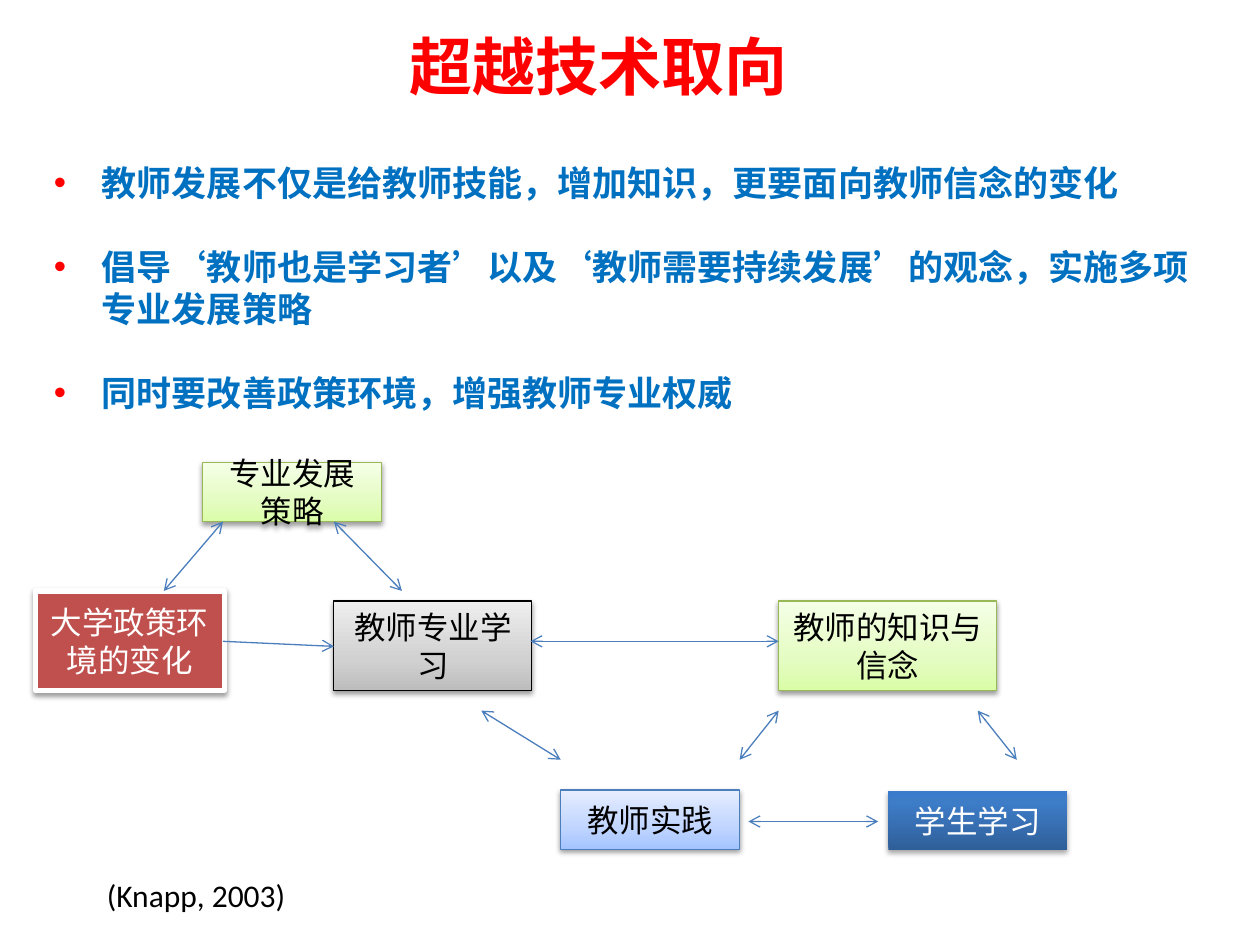
from dataclasses import dataclass

import lxml.etree
import pptx
import pptx.dml.color
import pptx.enum.shapes
import pptx.enum.text
import pptx.oxml.ns
import pptx.util

Inches = pptx.util.Inches
Pt = pptx.util.Pt
qn = pptx.oxml.ns.qn


@dataclass(frozen=True)
class Theme:
    title_font: str = "Lato"
    body_font: str = "Calibri"
    title_size: int = 36
    bullet_size: int = 20
    label_size: int = 18
    red: str = "FF0000"
    blue: str = "0070C0"
    black: str = "000000"
    white: str = "FFFFFF"
    arrow: str = "4B7EBC"


@dataclass(frozen=True)
class NodeStyle:
    """Gradient stops are (percent, colour) pairs, running from bottom to top."""
    stops: tuple
    line: str = None
    text: str = Theme.black
    line_width: float = 0.75
    shadow_alpha: int = 38
    shadow_distance: float = 1.6


THEME = Theme()
GREEN = NodeStyle(((0, "DAFDA7"), (35, "E4FCC2"), (100, "F5FFE7")), "98B955")
GREY = NodeStyle(((0, "BDBDBD"), (35, "D1D1D1"), (100, "EEEEEE")), THEME.black)
PALE_BLUE = NodeStyle(((0, "A4C4FF"), (35, "BFD4FF"), (100, "E6EEFF")), THEME.arrow)
DEEP_BLUE = NodeStyle(((0, "2F5F99"), (80, "3D7CC7"), (100, "3A7CCB")), None,
                      THEME.white, shadow_alpha=35, shadow_distance=1.8)
RED = NodeStyle(((0, "C0504D"),), THEME.white, THEME.white, 3)

TITLE = "超越技术取向"
BULLETS = [
    "教师发展不仅是给教师技能，增加知识，更要面向教师信念的变化",
    "倡导‘教师也是学习者’以及‘教师需要持续发展’的观念，实施多项专业发展策略",
    "同时要改善政策环境，增强教师专业权威",
]
# Positions are in inches from the corner of the diagram.
NODES = [
    ("专业发展策略", (1.33, 0, 1.42, 0.47), GREEN),
    ("大学政策环境的变化", (0, 1.02, 1.5, 0.79), RED),
    ("教师专业学习", (2.37, 1.1, 1.57, 0.71), GREY),
    ("教师实践", (4.17, 2.6, 1.42, 0.47), PALE_BLUE),
    ("教师的知识与信念", (5.9, 1.1, 1.73, 0.71), GREEN),
    ("学生学习", (6.77, 2.61, 1.42, 0.47), DEEP_BLUE),
]
TWO_WAY_ARROWS = [
    (1.49, 0.47, 1.02, 1.02),
    (2.37, 0.47, 2.91, 1.02),
    (3.93, 1.42, 5.9, 1.42),
    (3.54, 1.97, 4.17, 2.36),
    (5.9, 1.97, 5.59, 2.36),
    (7.48, 1.97, 7.79, 2.36),
    (5.66, 2.85, 6.69, 2.85),
]
ONE_WAY_ARROWS = [(1.49, 1.42, 2.37, 1.46)]


def rgb(colour):
    return pptx.dml.color.RGBColor.from_string(colour)


def add_element(parent, tag, **attributes):
    element = lxml.etree.SubElement(parent, qn(tag))
    for name, value in attributes.items():
        element.set(name, str(value))
    return element


def format_text(frame, font, size, colour, bold=False):
    for para in frame.paragraphs:
        for span in para.runs:
            span.font.name = font
            span.font.size = Pt(size)
            span.font.bold = bold
            span.font.color.rgb = rgb(colour)


def add_title(page, box):
    title = page.shapes.title
    title.left, title.top, title.width, title.height = map(Inches, box)
    frame = title.text_frame
    frame.text = TITLE
    frame.vertical_anchor = pptx.enum.text.MSO_ANCHOR.MIDDLE
    frame.paragraphs[0].alignment = pptx.enum.text.PP_ALIGN.CENTER
    format_text(frame, THEME.title_font, THEME.title_size, THEME.red, True)


def add_bullets(page, box):
    frame = page.shapes.add_textbox(*map(Inches, box)).text_frame
    frame.word_wrap = True
    frame.text = "\n".join(BULLETS)
    for para in frame.paragraphs:
        para.space_after = Pt(24)
        properties = para._p.get_or_add_pPr()
        properties.set("marL", str(Inches(0.38)))
        properties.set("indent", str(-Inches(0.38)))
        bullet_colour = add_element(properties, "a:buClr")
        add_element(bullet_colour, "a:srgbClr", val=THEME.red)
        add_element(properties, "a:buFont", typeface="Arial")
        add_element(properties, "a:buChar", char="•")
    format_text(frame, THEME.body_font, THEME.bullet_size, THEME.blue, True)


def fill_node(shape, stops):
    if len(stops) == 1:
        shape.fill.solid()
        shape.fill.fore_color.rgb = rgb(stops[0][1])
        return
    shape.fill.gradient()
    shape.fill.gradient_angle = 90
    stop_list = shape._element.spPr.find(qn("a:gradFill")).find(qn("a:gsLst"))
    for stop in list(stop_list):
        stop_list.remove(stop)
    for percent, colour in stops:
        stop = add_element(stop_list, "a:gs", pos=percent * 1000)
        add_element(stop, "a:srgbClr", val=colour)


def add_shadow(shape, style):
    shape.shadow.inherit = False
    effects = shape._element.spPr.find(qn("a:effectLst"))
    shadow = add_element(effects, "a:outerShdw", blurRad=Pt(3.1),
                         dist=Pt(style.shadow_distance), dir=90 * 60000, rotWithShape=0)
    colour = add_element(shadow, "a:srgbClr", val=THEME.black)
    add_element(colour, "a:alpha", val=style.shadow_alpha * 1000)


def add_node(page, box, label, style):
    shape = page.shapes.add_shape(pptx.enum.shapes.MSO_SHAPE.RECTANGLE, *map(Inches, box))
    fill_node(shape, style.stops)
    if style.line:
        shape.line.color.rgb = rgb(style.line)
        shape.line.width = Pt(style.line_width)
    else:
        shape.line.fill.background()
    add_shadow(shape, style)
    frame = shape.text_frame
    frame.text = label
    frame.vertical_anchor = pptx.enum.text.MSO_ANCHOR.MIDDLE
    frame.paragraphs[0].alignment = pptx.enum.text.PP_ALIGN.CENTER
    format_text(frame, THEME.body_font, THEME.label_size, style.text)


def add_arrow(page, ends, two_way):
    arrow = page.shapes.add_connector(
        pptx.enum.shapes.MSO_CONNECTOR.STRAIGHT, *map(Inches, ends))
    arrow.line.color.rgb = rgb(THEME.arrow)
    arrow.line.width = Pt(0.75)
    line = arrow.line._get_or_add_ln()
    if two_way:
        add_element(line, "a:headEnd", type="arrow")
    add_element(line, "a:tailEnd", type="arrow")
    add_element(arrow._element.spPr, "a:effectLst")


def add_diagram(page, left, top):
    for label, (x, y, width, height), style in NODES:
        add_node(page, (left + x, top + y, width, height), label, style)
    for arrows, two_way in ((TWO_WAY_ARROWS, True), (ONE_WAY_ARROWS, False)):
        for x1, y1, x2, y2 in arrows:
            add_arrow(page, (left + x1, top + y1, left + x2, top + y2), two_way)


def add_citation(page, box):
    frame = page.shapes.add_textbox(*map(Inches, box)).text_frame
    frame.word_wrap = True
    frame.text = "(Knapp, 2003)"
    format_text(frame, THEME.body_font, THEME.label_size, THEME.black)


def main():
    deck = pptx.Presentation()
    deck.slide_width, deck.slide_height = Inches(10), Inches(7.5)
    page = deck.slides.add_slide(deck.slide_layouts.get_by_name("Title Only"))
    add_title(page, (0.25, -0.11, 9, 1.25))
    add_bullets(page, (0.33, 1.23, 9.39, 2.3))
    add_diagram(page, 0.28, 3.67)
    add_citation(page, (0.75, 6.9, 1.9, 0.4))
    deck.save("out.pptx")


if __name__ == "__main__":
    main()
